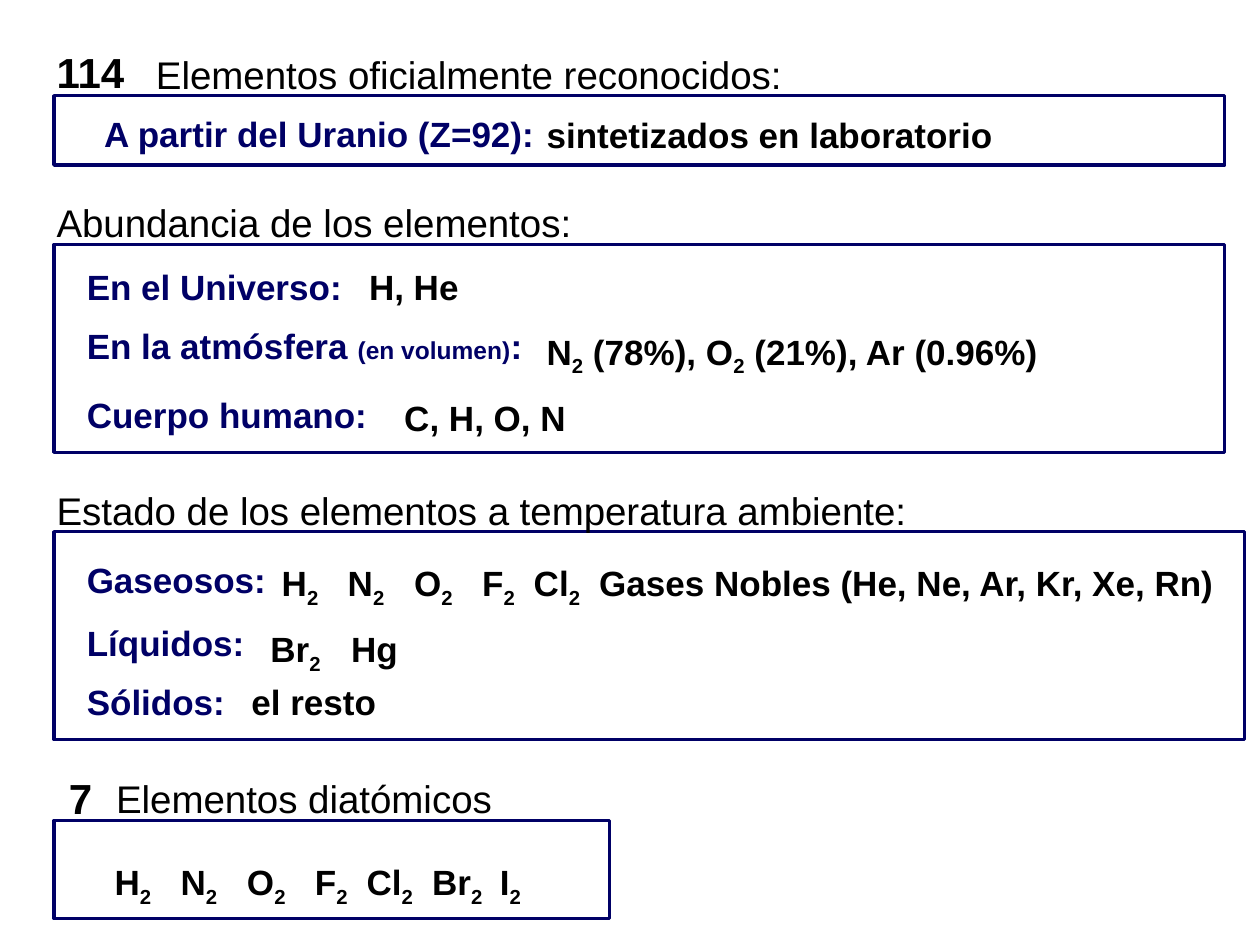
import pptx
import pptx.util
import pptx.dml.color
import pptx.enum.shapes
import pptx.enum.text
import pptx.oxml

Cm = pptx.util.Cm
Pt = pptx.util.Pt
COLORS = {"navy": "000066", "black": "000000", "white": "FFFFFF"}
STYLES = {
    "head": (22, "black", False),
    "count": (24, "black", True),
    "label": (20, "navy", True),
    "value": (20, "black", True),
}
GASES = (1.33, 2.67, 4.04, 5.08, 6.4, 7.77)
LIQUIDS = (1.63,)


def color(name):
    return pptx.dml.color.RGBColor.from_string(COLORS[name])


def set_tabs(par, stops):
    props = par._p.get_or_add_pPr()
    tabs = pptx.oxml.parse_xml(
        '<a:tabLst xmlns:a="http://schemas.openxmlformats.org/drawingml/2006/main"/>')
    props.append(tabs)
    for stop in stops:
        tab = tabs.makeelement(pptx.oxml.ns.qn("a:tab"),
                               {"pos": str(int(Cm(stop))), "algn": "l"})
        tabs.append(tab)


def write(shape, text, style, stops=()):
    size, tint, bold = STYLES[style]
    frame = shape.text_frame
    frame.word_wrap = True
    frame.auto_size = pptx.enum.text.MSO_AUTO_SIZE.NONE
    frame.vertical_anchor = pptx.enum.text.MSO_ANCHOR.TOP
    par = frame.paragraphs[0]
    par.alignment = pptx.enum.text.PP_ALIGN.LEFT
    par.line_spacing = 1.5
    par.space_before = Pt(0)
    if stops:
        set_tabs(par, stops)
    for index, piece in enumerate(text.split("|")):
        if not piece:
            continue
        run = par.add_run()
        run.text = piece
        font = run.font
        font.name, font.size, font.bold = "Arial", Pt(size), bold
        font.color.rgb = color(tint)
        if index % 2 and piece == "2":
            run._r.get_or_add_rPr().set("baseline", "-25000")
        elif index % 2:
            font.size = Pt(14)


def draw_panel(slide, box, head, items, title=None):
    left, top, width, height = box
    frame = slide.shapes.add_shape(pptx.enum.shapes.MSO_SHAPE.RECTANGLE,
                                   *(Cm(v) for v in box))
    frame.shadow.inherit = False
    frame.fill.solid()
    frame.fill.fore_color.rgb = color("white")
    frame.line.color.rgb = color("navy")
    frame.line.width = Pt(2)
    for dx, dy, wide, style, text, *stops in [head] + items:
        spot = (Cm(left + dx), Cm(top + dy), Cm(wide), Cm(1.55))
        if title is not None and style == "head":
            shape = title
            shape.left, shape.top, shape.width, shape.height = spot
        else:
            shape = slide.shapes.add_textbox(*spot)
        write(shape, text, style, *stops)


def main():
    deck = pptx.Presentation()
    deck.slide_width, deck.slide_height = Cm(25.4), Cm(19.05)
    slide = deck.slides.add_slide(deck.slide_layouts[5])

    draw_panel(slide, (1.09, 1.93, 23.6, 1.4),
               (1.8, -1.5, 13.6, "head", "Elementos oficialmente reconocidos:"), [
        (-0.2, -1.63, 2.2, "count", "114"),
        (0.76, -0.2, 9.5, "label", "A partir del Uranio (Z=92):"),
        (9.68, -0.18, 9.9, "value", "sintetizados en laboratorio"),
    ], slide.shapes.title)

    draw_panel(slide, (1.09, 4.93, 23.6, 4.19),
               (-0.2, -1.5, 11.4, "head", "Abundancia de los elementos:"), [
        (0.41, -0.13, 6, "label", "En el Universo:"),
        (6.1, -0.13, 2.7, "value", "H, He"),
        (0.41, 1.07, 9.7, "label", "En la atmósfera |(en volumen)|:"),
        (9.68, 1.12, 11, "value", "N|2| (78%), O|2| (21%), Ar (0.96%)"),
        (0.41, 2.46, 6.5, "label", "Cuerpo humano:"),
        (6.81, 2.51, 4.2, "value", "C, H, O, N"),
    ])

    draw_panel(slide, (1.09, 10.72, 24, 4.19),
               (-0.2, -1.5, 18.2, "head",
                "Estado de los elementos a temperatura ambiente:"), [
        (0.41, 0, 4.5, "label", "Gaseosos:"),
        (4.34, 0, 19.8, "value",
         "H|2|\tN|2|\tO|2|\tF|2|\tCl|2|\tGases Nobles (He, Ne, Ar, Kr, Xe, Rn)",
         GASES),
        (0.41, 1.27, 4, "label", "Líquidos:"),
        (4.11, 1.32, 3.4, "value", "Br|2|\tHg", LIQUIDS),
        (0.41, 2.46, 3.6, "label", "Sólidos:"),
        (3.73, 2.46, 3.4, "value", "el resto"),
    ])

    draw_panel(slide, (1.09, 16.54, 11.2, 1.98),
               (1, -1.5, 8.6, "head", "Elementos diatómicos"), [
        (0.05, -1.6, 1.2, "count", "7"),
        (0.97, 0.2, 9.4, "value",
         "H|2|\tN|2|\tO|2|\tF|2|\tCl|2|\tBr|2|\tI|2|", GASES),
    ])
    deck.save("out.pptx")


if __name__ == "__main__":
    main()
